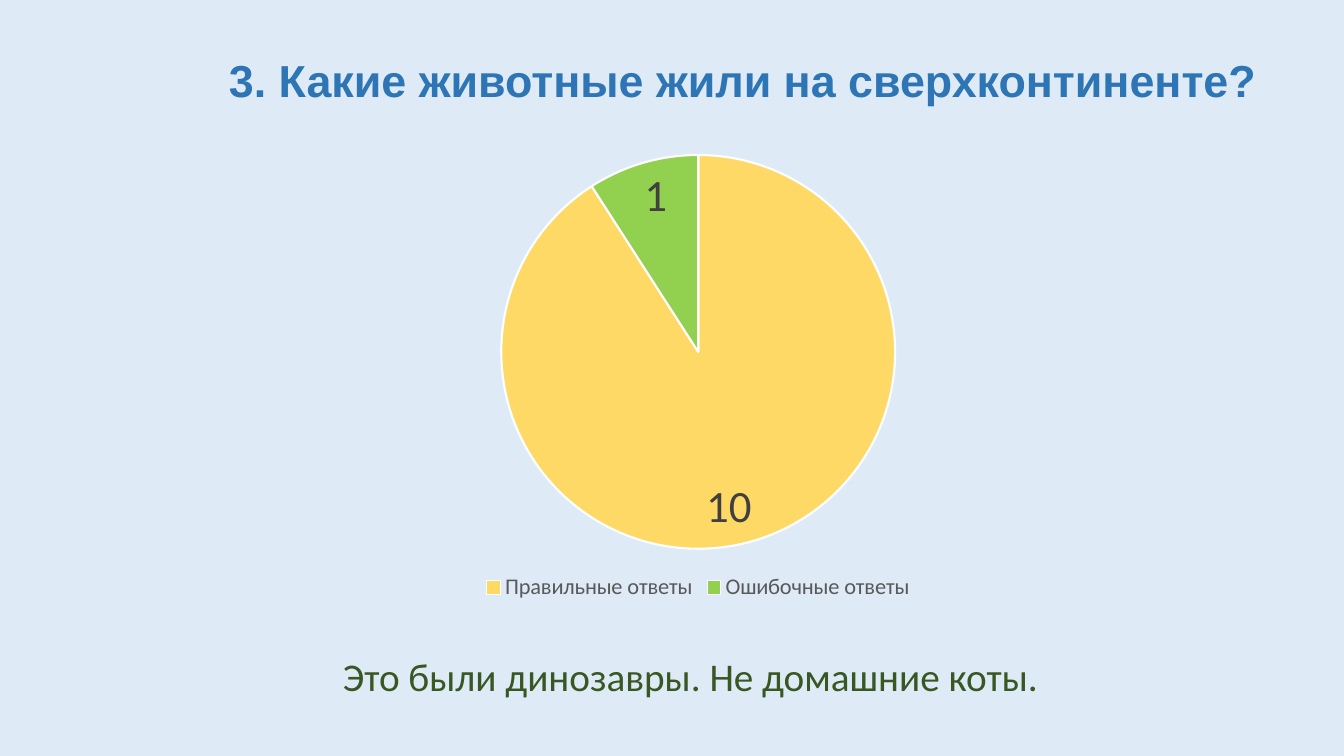
from lxml import etree
from pptx import Presentation
from pptx.chart.data import CategoryChartData
from pptx.dml.color import RGBColor
from pptx.enum.chart import XL_CHART_TYPE, XL_LABEL_POSITION, XL_LEGEND_POSITION
from pptx.enum.text import MSO_ANCHOR, PP_ALIGN
from pptx.oxml.ns import qn
from pptx.util import Inches, Pt

PIE = XL_CHART_TYPE.PIE
INSIDE_END = XL_LABEL_POSITION.INSIDE_END
BOTTOM = XL_LEGEND_POSITION.BOTTOM
TOP = MSO_ANCHOR.TOP
CENTER, JUSTIFY = PP_ALIGN.CENTER, PP_ALIGN.JUSTIFY

COLORS = {
    "background": "DEEBF7",
    "question": "2E75B6",
    "correct": "FFD966",
    "wrong": "92D050",
    "border": "FFFFFF",
    "label": "404040",
    "legend": "595959",
    "conclusion": "385723",
}
ANSWERS = [("Правильные ответы", 10, "correct"), ("Ошибочные ответы", 1, "wrong")]
# Pie area as fractions of the chart frame
PIE_AREA = {"x": 0.22, "y": 0.13, "w": 0.56, "h": 0.76}


def rgb(name):
    return RGBColor.from_string(COLORS[name])


def style_font(font, size, color, face="Calibri", bold=False):
    font.name, font.size, font.bold = face, Pt(size), bold
    font.color.rgb = rgb(color)


def place_question(slide, left, top, width, height):
    title = slide.shapes.title
    title.left, title.top = Inches(left), Inches(top)
    title.width, title.height = Inches(width), Inches(height)
    frame = title.text_frame
    frame.vertical_anchor = TOP
    paragraph = frame.paragraphs[0]
    paragraph.alignment = JUSTIFY
    paragraph.line_spacing = 1.07
    run = paragraph.add_run()
    run.text = "3. Какие животные жили на сверхконтиненте?"
    style_font(run.font, 32, "question", "Arial", True)


def set_pie_area(chart):
    """Fix the inner plot area, which python-pptx leaves automatic."""
    plot_area = chart.element.find(".//" + qn("c:plotArea"))
    layout = etree.Element(qn("c:layout"))
    manual = etree.SubElement(layout, qn("c:manualLayout"))
    settings = {"layoutTarget": "inner", "xMode": "edge", "yMode": "edge", **PIE_AREA}
    for tag, value in settings.items():
        etree.SubElement(manual, qn("c:" + tag)).set("val", str(value))
    plot_area.insert(0, layout)


def add_answers_pie(slide, left, top, width, height):
    data = CategoryChartData()
    data.categories = [answer for answer, _, _ in ANSWERS]
    data.add_series("Ответы", [count for _, count, _ in ANSWERS])
    chart = slide.shapes.add_chart(
        PIE, Inches(left), Inches(top), Inches(width), Inches(height), data
    ).chart
    chart.has_title = False
    chart.has_legend = True
    chart.legend.position = BOTTOM
    chart.legend.include_in_layout = False
    style_font(chart.legend.font, 16, "legend")

    plot = chart.plots[0]
    plot.vary_by_categories = True
    for index, (_, _, color) in enumerate(ANSWERS):
        slice_format = plot.series[0].points[index].format
        slice_format.fill.solid()
        slice_format.fill.fore_color.rgb = rgb(color)
        slice_format.line.color.rgb = rgb("border")
        slice_format.line.width = Pt(1.5)

    labels = plot.series[0].data_labels
    labels.show_value = True
    labels.position = INSIDE_END
    style_font(labels.font, 32, "label")
    set_pie_area(chart)


def add_conclusion(slide, left, top, width, height):
    box = slide.shapes.add_textbox(
        Inches(left), Inches(top), Inches(width), Inches(height)
    )
    box.text_frame.word_wrap = False
    paragraph = box.text_frame.paragraphs[0]
    paragraph.alignment = CENTER
    run = paragraph.add_run()
    run.text = "Это были динозавры. Не домашние коты. "
    style_font(run.font, 28, "conclusion")


def main():
    deck = Presentation()
    deck.slide_width, deck.slide_height = Inches(13.33), Inches(7.5)
    slide = deck.slides.add_slide(deck.slide_layouts[5])
    slide.background.fill.solid()
    slide.background.fill.fore_color.rgb = rgb("background")
    place_question(slide, 2.17, 0.44, 12.31, 0.64)
    add_answers_pie(slide, 3.42, 0.87, 7.01, 5.14)
    add_conclusion(slide, 3.26, 6.42, 7.26, 0.57)
    deck.save("out.pptx")


if __name__ == "__main__":
    main()
